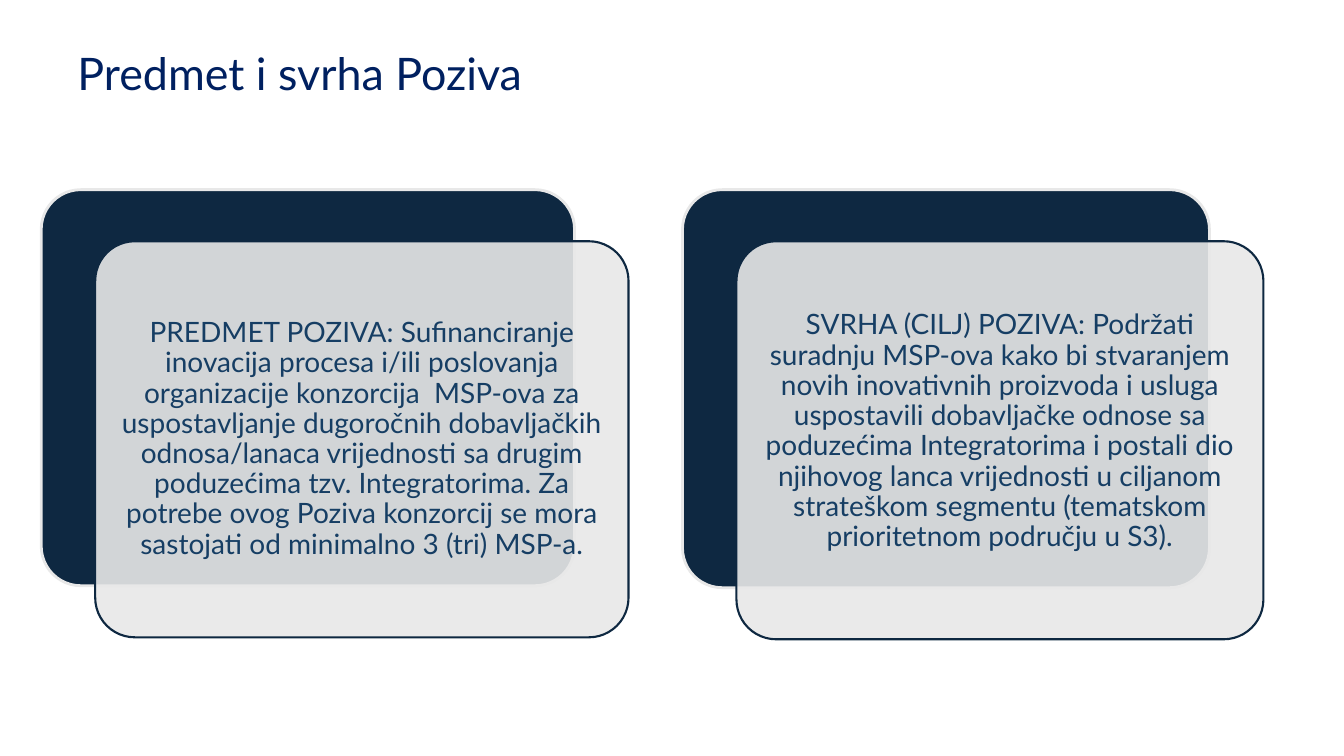
from lxml.etree import SubElement
from pptx import Presentation
from pptx.dml.color import RGBColor
from pptx.enum.shapes import MSO_SHAPE
from pptx.enum.text import MSO_ANCHOR, PP_ALIGN
from pptx.oxml.ns import qn
from pptx.util import Cm, Pt

TITLE = "Predmet i svrha Poziva"
CARDS = [
    {
        "left": 1.04, "width": 13.44, "height": 9.98, "bottom_margin": 0.2,
        "text": "PREDMET POZIVA: Sufinanciranje inovacija procesa i/ili poslovanja "
                "organizacije konzorcija  MSP-ova za uspostavljanje dugoročnih "
                "dobavljačkih odnosa/lanaca vrijednosti sa drugim poduzećima tzv. "
                "Integratorima. Za potrebe ovog Poziva konzorcij se mora sastojati "
                "od minimalno 3 (tri) MSP-a.",
    },
    {
        "left": 17.2, "width": 13.28, "height": 10.03, "bottom_margin": 0.63,
        "text": "SVRHA (CILJ) POZIVA: Podržati suradnju MSP-ova kako bi stvaranjem "
                "novih inovativnih proizvoda i usluga uspostavili dobavljačke odnose "
                "sa poduzećima Integratorima i postali dio njihovog lanca vrijednosti "
                "u ciljanom strateškom segmentu (tematskom prioritetnom području u S3).",
    },
]

FONT = "Lato"
TITLE_BLUE = RGBColor(0x00, 0x20, 0x60)
NAVY = RGBColor(0x0E, 0x28, 0x41)
PALE = RGBColor(0xE8, 0xE8, 0xE8)
TEXT_BLUE = RGBColor(0x16, 0x3E, 0x64)

CARD_TOP = 4.78
SHIFT_X, SHIFT_Y = 1.36, 1.3
MARGIN = 0.2


def add_panel(slide, left, top, width, height, fill, line, line_width):
    shape = slide.shapes.add_shape(
        MSO_SHAPE.ROUNDED_RECTANGLE, Cm(left), Cm(top), Cm(width), Cm(height))
    shape.adjustments[0] = 0.1
    shape.shadow.inherit = False
    shape.fill.solid()
    shape.fill.fore_color.rgb = fill
    shape.line.color.rgb = line
    shape.line.width = Pt(line_width)
    return shape


def set_opacity(shape, percent):
    color = shape.fill._xPr.find(qn("a:solidFill")).find(qn("a:srgbClr"))
    SubElement(color, qn("a:alpha"), val=str(percent * 1000))


def write_text(shape, text, size, color, alignment):
    frame = shape.text_frame
    frame.word_wrap = True
    frame.vertical_anchor = MSO_ANCHOR.MIDDLE
    paragraph = frame.paragraphs[0]
    paragraph.text = text
    paragraph.alignment = alignment
    paragraph.line_spacing = 0.9
    paragraph.font.name = FONT
    paragraph.font.size = Pt(size)
    paragraph.font.color.rgb = color
    return frame


def add_card(slide, card):
    left, width, height = card["left"], card["width"], card["height"]
    add_panel(slide, left, CARD_TOP, width, height, NAVY, PALE, 2)
    front = add_panel(slide, left + SHIFT_X, CARD_TOP + SHIFT_Y,
                      width, height, PALE, NAVY, 1.5)
    set_opacity(front, 90)
    frame = write_text(front, card["text"], 20, TEXT_BLUE, PP_ALIGN.CENTER)
    frame.margin_left = frame.margin_right = frame.margin_top = Cm(MARGIN)
    frame.margin_bottom = Cm(card["bottom_margin"])


def main():
    presentation = Presentation()
    presentation.slide_width = Cm(33.87)
    presentation.slide_height = Cm(19.05)
    slide = presentation.slides.add_slide(presentation.slide_layouts[6])
    title = slide.shapes.add_textbox(Cm(1.7), Cm(-0.33), Cm(23.75), Cm(4.5))
    write_text(title, TITLE, 32, TITLE_BLUE, PP_ALIGN.LEFT)
    for card in CARDS:
        add_card(slide, card)
    presentation.save("out.pptx")


if __name__ == "__main__":
    main()
